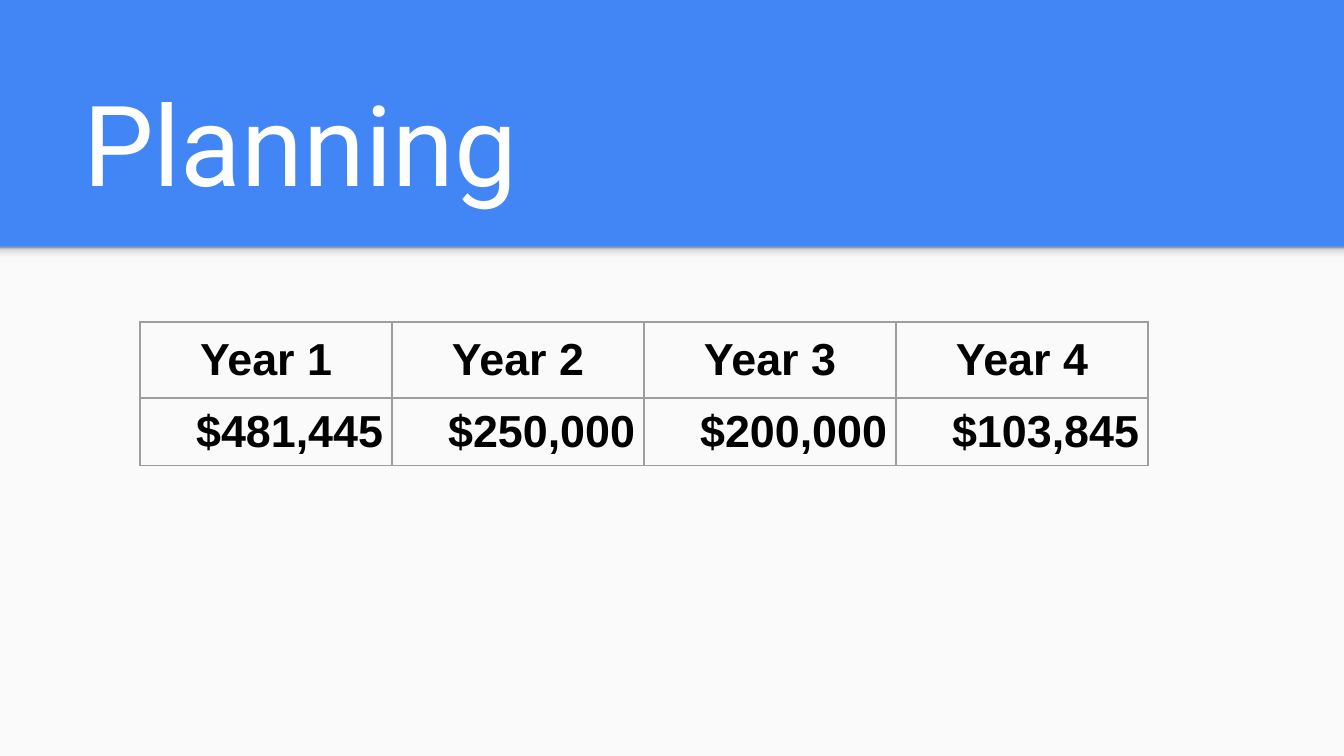
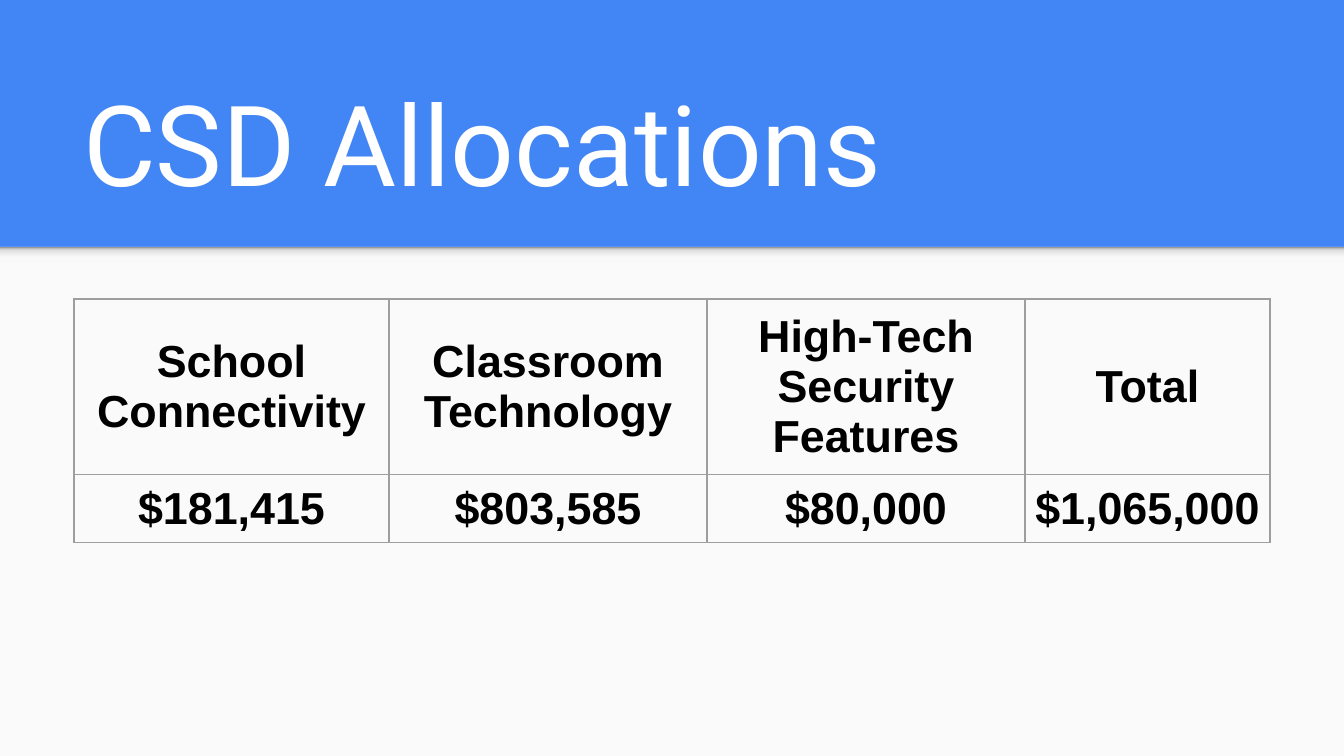
"""Build two budget slides, each with a title band and a table."""
from lxml.etree import SubElement
from pptx import Presentation
from pptx.dml.color import RGBColor
from pptx.enum.shapes import MSO_SHAPE
from pptx.enum.text import MSO_ANCHOR, MSO_AUTO_SIZE, PP_ALIGN
from pptx.oxml.ns import qn
from pptx.util import Pt

COLORS = {"blue": "4285F4", "panel": "FAFAFA", "white": "FFFFFF",
          "text": "000000", "border": "9E9E9E"}
SHADE = [(0, "F9F9F9"), (36, "F9F9F9"), (80, "DEDEDE"), (100, "999999")]
WIDTH, HEIGHT, BAND = 1344, 756, 247
TOP, MIDDLE = MSO_ANCHOR.TOP, MSO_ANCHOR.MIDDLE
CENTER, RIGHT = PP_ALIGN.CENTER, PP_ALIGN.RIGHT
SLIDES = [
    {"title": "Planning", "at": (140, 322), "cols": [252] * 4,
     "head_anchor": TOP, "amount_align": RIGHT,
     "rows": [["Year 1", "Year 2", "Year 3", "Year 4"],
              ["$481,445", "$250,000", "$200,000", "$103,845"]]},
    {"title": "CSD Allocations", "at": (74, 299), "cols": [315, 318, 318, 245],
     "head_anchor": MIDDLE, "amount_align": CENTER,
     "rows": [["School Connectivity", "Classroom Technology",
               "High-Tech Security Features", "Total"],
              ["$181,415", "$803,585", "$80,000", "$1,065,000"]]},
]


def px(n):
    return round(n * 914400 / 134.4)


def style_run(p, font, size, color, bold=False):
    f = p.runs[0].font
    f.name, f.size, f.bold = font, Pt(size), bold
    f.color.rgb = RGBColor.from_string(COLORS[color])


prs = Presentation()
prs.slide_width, prs.slide_height = px(WIDTH), px(HEIGHT)
bg = prs.slide_master.background.fill
bg.solid()
bg.fore_color.rgb = RGBColor.from_string(COLORS["blue"])

for data in SLIDES:
    s = prs.slides.add_slide(prs.slide_layouts[5])

    panel, shade = [s.shapes.add_shape(MSO_SHAPE.RECTANGLE, 0, px(BAND), px(WIDTH), px(h))
                    for h in (HEIGHT - BAND, 16)]
    for sp in (panel, shade):
        sp.shadow.inherit = False
        sp.line.fill.background()
    panel.fill.solid()
    panel.fill.fore_color.rgb = RGBColor.from_string(COLORS["panel"])
    shade.fill.gradient()
    shade.fill.gradient_angle = 90
    stops = shade._element.spPr.find(qn("a:gradFill")).find(qn("a:gsLst"))
    stops.clear()
    for pos, color in SHADE:
        gs = SubElement(stops, qn("a:gs"), pos=str(pos * 1000))
        SubElement(gs, qn("a:srgbClr"), val=color)

    title = s.shapes.title
    title.left, title.top, title.width, title.height = px(70), px(65), px(1208), px(157)
    tf = title.text_frame
    tf.text = data["title"]
    tf.auto_size = MSO_AUTO_SIZE.NONE
    tf.vertical_anchor = MSO_ANCHOR.BOTTOM
    tf.margin_left = tf.margin_right = tf.margin_top = tf.margin_bottom = px(13)
    p = tf.paragraphs[0]
    p.alignment = PP_ALIGN.LEFT
    style_run(p, "Roboto", 60, "white")

    left, top = data["at"]
    rows, cols = data["rows"], data["cols"]
    table = s.shapes.add_table(len(rows), len(cols), px(left), px(top),
                               px(sum(cols)), px(56 * len(rows))).table
    table.first_row = table.horz_banding = False
    for col, width in zip(table.columns, cols):
        col.width = px(width)
    formats = [(data["head_anchor"], CENTER, 13), (MIDDLE, data["amount_align"], 9)]
    for r, (texts, (anchor, align, inset)) in enumerate(zip(rows, formats)):
        for c, text in enumerate(texts):
            cell = table.cell(r, c)
            cell.text_frame.text = text
            cell.vertical_anchor = anchor
            cell.margin_left = cell.margin_right = px(inset)
            cell.margin_top = cell.margin_bottom = px(inset)
            p = cell.text_frame.paragraphs[0]
            p.alignment = align
            style_run(p, "Arial", 24, "text", True)
            tcPr = cell._tc.get_or_add_tcPr()
            for side in "LRTB":
                ln = SubElement(tcPr, qn(f"a:ln{side}"), w=str(Pt(0.75)))
                fill = SubElement(ln, qn("a:solidFill"))
                SubElement(fill, qn("a:srgbClr"), val=COLORS["border"])
            cell.fill.background()

prs.save("out.pptx")
